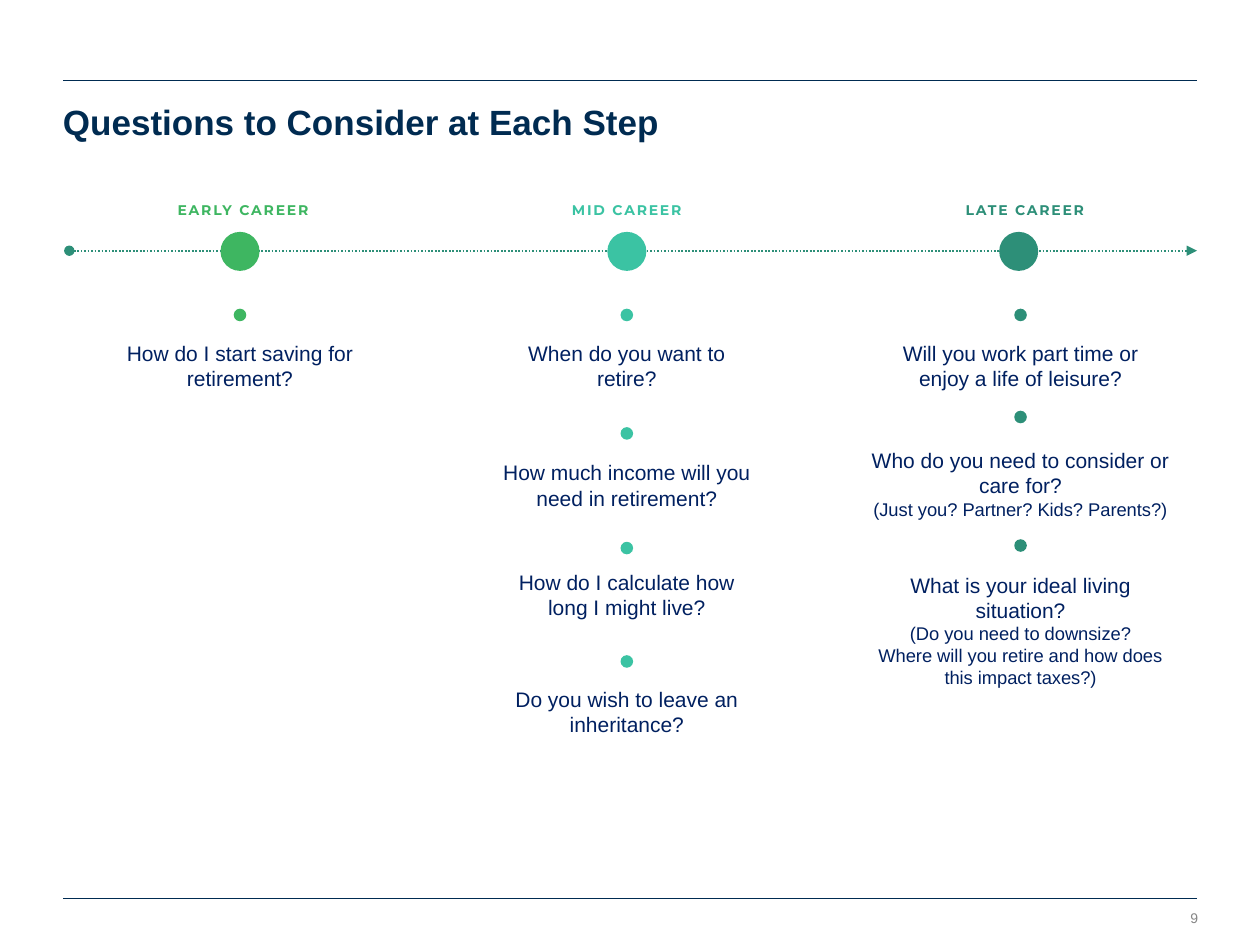
"""Build a career timeline slide with retirement questions at each step."""
from lxml.etree import SubElement
from pptx import Presentation
from pptx.dml.color import RGBColor
from pptx.enum.dml import MSO_LINE
from pptx.enum.shapes import MSO_CONNECTOR, MSO_SHAPE
from pptx.enum.text import PP_ALIGN
from pptx.oxml.ns import qn
from pptx.util import Inches, Pt

NAVY, TEXT_BLUE, GREY = "002B51", "002060", "868686"
GREEN, TEAL, DARK_TEAL = "3EB661", "3BC3A3", "2D8F78"

deck = Presentation()
deck.slide_width, deck.slide_height = Inches(10), Inches(7.5)
page = deck.slides.add_slide(deck.slide_layouts[6])
column = deck.slide_width / 100
row = deck.slide_height / 75


def write(left, top, width, height, lines, color, align=PP_ALIGN.CENTER,
          font="Arial", bold=False, wrap=True, spacing=0):
    box = page.shapes.add_textbox(int(left * column), int(top * row),
                                  int(width * column), int(height * row))
    frame = box.text_frame
    frame.word_wrap = wrap
    frame.margin_left = frame.margin_right = 0
    frame.margin_top = frame.margin_bottom = 0
    for index, (text, size) in enumerate(lines):
        para = frame.add_paragraph() if index else frame.paragraphs[0]
        para.alignment = align
        span = para.add_run()
        span.text = text
        if spacing:
            span._r.get_or_add_rPr().set("spc", str(spacing))
        para.font.name = font
        para.font.size = Pt(size)
        para.font.bold = bold
        para.font.color.rgb = RGBColor.from_string(color)


def dot(center, middle, size, color):
    circle = page.shapes.add_shape(
        MSO_SHAPE.OVAL, int((center - size / 2) * column),
        int((middle - size / 2) * row), int(size * column), int(size * row))
    circle.shadow.inherit = False
    circle.fill.solid()
    circle.fill.fore_color.rgb = RGBColor.from_string(color)
    circle.line.fill.background()


for start, level, color, weight, is_timeline in [
    (5, 6.4, NAVY, 1, False),
    (5, 71.3, NAVY, 0.5, False),
    (5.5, 19.9, DARK_TEAL, 1, True),
]:
    rule = page.shapes.add_connector(
        MSO_CONNECTOR.STRAIGHT, int(start * column), int(level * row),
        int(95 * column), int(level * row))
    rule.line.color.rgb = RGBColor.from_string(color)
    rule.line.width = Pt(weight)
    if is_timeline:
        rule.line.dash_style = MSO_LINE.ROUND_DOT
        outline = rule.line._get_or_add_ln()
        SubElement(outline, qn("a:headEnd"), type="oval")
        SubElement(outline, qn("a:tailEnd"), type="triangle")
    SubElement(rule._element.spPr, qn("a:effectLst"))

write(5, 8, 90, 3.4, [("Questions to Consider at Each Step", 20)], NAVY,
      align=PP_ALIGN.LEFT, bold=True)
write(93.7, 72.2, 1.4, 1.3, [("9", 8)], GREY, align=PP_ALIGN.RIGHT, wrap=False)

stages = [
    ("EARLY CAREER", GREEN, 19.3, 19.05, 19.05, [
        (25, 27, 19.9, [("How do I start saving for retirement?", 12)]),
    ]),
    ("MID CAREER", TEAL, 49.75, 49.75, 49.75, [
        (25, 27, 19.9, [("When do you want to retire?", 12)]),
        (34.4, 36.5, 19.9, [("How much income will you need in retirement?", 12)]),
        (43.5, 45.2, 19.9, [("How do I calculate how long I might live?", 12)]),
        (52.5, 54.5, 19.9, [("Do you wish to leave an inheritance?", 12)]),
    ]),
    ("LATE CAREER", DARK_TEAL, 81.35, 80.85, 81, [
        (25, 27, 19.9, [("Will you work part time or enjoy a life of leisure?", 12)]),
        (33.1, 35.5, 26, [("Who do you need to consider or care for?", 12),
                          ("(Just you? Partner? Kids? Parents?)", 10.5)]),
        (43.3, 45.4, 24.5, [
            ("What is your ideal living situation?", 12),
            ("(Do you need to downsize?", 10.5),
            ("Where will you retire and how does this impact taxes?)", 10.5)]),
    ]),
]

for label, color, label_center, marker_center, question_center, questions in stages:
    write(label_center - 6, 16, 12, 1.3, [(label, 8)], color,
          font="Montserrat", bold=True, wrap=False, spacing=100)
    dot(marker_center, 19.95, 3.1, color)
    for dot_middle, top, width, lines in questions:
        dot(question_center, dot_middle, 1, color)
        height = sum(size for text, size in lines) / 6
        write(question_center - width / 2, top, width, height, lines, TEXT_BLUE)

deck.save("out.pptx")
